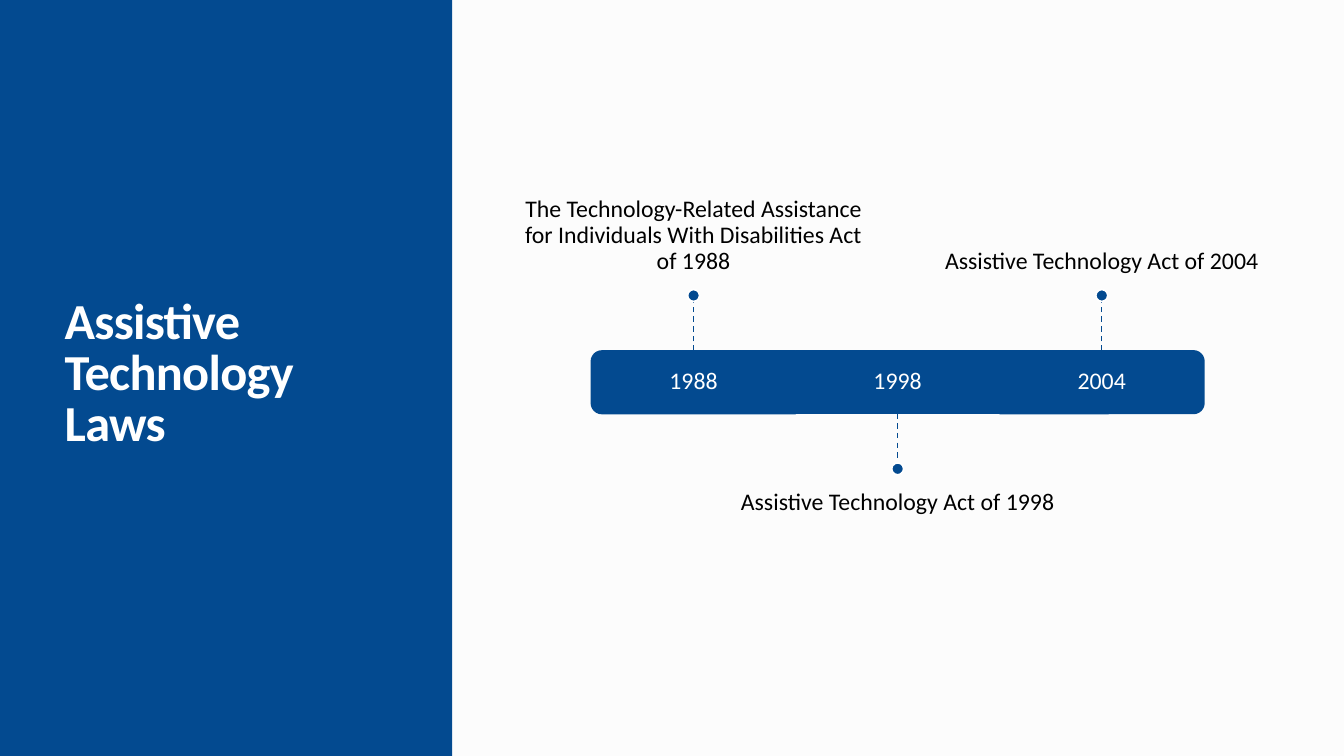
from lxml import etree
from pptx import Presentation
from pptx.dml.color import RGBColor
from pptx.enum.dml import MSO_LINE
from pptx.enum.shapes import MSO_CONNECTOR, MSO_SHAPE
from pptx.enum.text import MSO_ANCHOR, MSO_AUTO_SIZE, PP_ALIGN
from pptx.oxml.ns import qn
from pptx.util import Pt

RECTANGLE, OVAL = MSO_SHAPE.RECTANGLE, MSO_SHAPE.OVAL
ROUNDED_END = MSO_SHAPE.ROUND_2_SAME_RECTANGLE
TOP, MIDDLE, BOTTOM = MSO_ANCHOR.TOP, MSO_ANCHOR.MIDDLE, MSO_ANCHOR.BOTTOM
LEFT, CENTER = PP_ALIGN.LEFT, PP_ALIGN.CENTER
BLUE, WHITE, BLACK, PAPER = "034A90", "FFFFFF", "000000", "FCFCFC"


def add_block(kind, left, top, width, height, outline=None):
    shape = slide.shapes.add_shape(kind, Pt(left), Pt(top), Pt(width), Pt(height))
    shape.shadow.inherit = False
    shape.fill.solid()
    shape.fill.fore_color.rgb = RGBColor.from_string(BLUE)
    if outline:
        shape.line.color.rgb = RGBColor.from_string(outline)
        shape.line.width = Pt(1.25)
    else:
        shape.line.fill.background()
    return shape


def write_text(shape, text, color, anchor, alignment, spacing, font_values, margins):
    frame = shape.text_frame
    frame.text = text
    frame.word_wrap = True
    frame.auto_size = MSO_AUTO_SIZE.NONE
    frame.vertical_anchor = anchor
    for side, margin in margins.items():
        setattr(frame, "margin_" + side, Pt(margin))
    paragraph = frame.paragraphs[0]
    paragraph.alignment = alignment
    paragraph.line_spacing = spacing
    paragraph.space_before = paragraph.space_after = Pt(0)
    font = paragraph.runs[0].font
    font.color.rgb = RGBColor.from_string(color)
    for name, value in font_values.items():
        setattr(font, name, value)


presentation = Presentation()
presentation.slide_width, presentation.slide_height = Pt(960), Pt(540)
slide = presentation.slides.add_slide(presentation.slide_layouts[5])
slide.background.fill.solid()
slide.background.fill.fore_color.rgb = RGBColor.from_string(PAPER)

# Left panel with its edge strip
add_block(RECTANGLE, 0, 0, 319, 540)
add_block(RECTANGLE, 318, 0, 5, 540)

# Title, moved in front of the panel
title = slide.shapes.title
title.left, title.top, title.width, title.height = Pt(39), Pt(41), Pt(243), Pt(454)
write_text(title, "Assistive Technology Laws", WHITE, MIDDLE, LEFT, 0.85,
           {"name": "Calibri", "size": Pt(36), "bold": True},
           {"left": 7.2, "right": 7.2, "top": 3.6, "bottom": 3.6})
title.text_frame.paragraphs[0].runs[0].font._element.set("spc", "-50")
slide.shapes._spTree.append(title._element)

# Timeline: year, law, law above the bar, segment shape, rotation
milestones = [
    ("1988", "The Technology-Related Assistance for Individuals With Disabilities Act of 1988",
     True, ROUNDED_END, 270),
    ("1998", "Assistive Technology Act of 1998", False, RECTANGLE, 0),
    ("2004", "Assistive Technology Act of 2004", True, ROUNDED_END, 90),
]
first_center, segment_width = 495.4, 145.8
bar_middle, bar_height = 273, 44.6
stem, dot = 35.3, 8.6
law_width, law_height = 243.4, 155.5
label_font = {"name": "Calibri", "size": Pt(17)}

for index, (year, law, above, kind, rotation) in enumerate(milestones):
    center = first_center + index * segment_width
    direction = -1 if above else 1

    # Bar segment, with the end pieces turned outwards
    width, height = (bar_height, segment_width) if rotation else (segment_width, bar_height)
    segment = add_block(kind, center - width / 2, bar_middle - height / 2, width, height, BLUE)
    segment.rotation = rotation

    # Year
    year_box = slide.shapes.add_textbox(Pt(center - segment_width / 2),
                                        Pt(bar_middle - bar_height / 2),
                                        Pt(segment_width), Pt(bar_height))
    write_text(year_box, year, WHITE, MIDDLE, CENTER, 0.9, label_font,
               dict.fromkeys(("left", "right", "top", "bottom"), 10))

    # Dashed stem
    stem_start = bar_middle + direction * bar_height / 2
    stem_end = stem_start + direction * stem
    connector = slide.shapes.add_connector(MSO_CONNECTOR.STRAIGHT, Pt(center), Pt(stem_start),
                                           Pt(center), Pt(stem_end))
    connector.line.color.rgb = RGBColor.from_string(BLUE)
    connector.line.width = Pt(1)
    connector.line.dash_style = MSO_LINE.DASH
    etree.SubElement(connector._element.spPr, qn("a:effectLst"))

    # Dot at the end of the stem
    dot_middle = stem_end + direction * dot / 2
    add_block(OVAL, center - dot / 2, dot_middle - dot / 2, dot, dot, WHITE)

    # Law beyond the dot
    law_edge = stem_end + direction * (dot + 0.7)
    law_box = slide.shapes.add_textbox(Pt(center - law_width / 2),
                                       Pt(law_edge - law_height if above else law_edge),
                                       Pt(law_width), Pt(law_height))
    write_text(law_box, law, BLACK, BOTTOM if above else TOP, CENTER, 0.9, label_font,
               {"left": 0, "right": 0, "top": 0 if above else 10, "bottom": 10 if above else 0})

presentation.save("out.pptx")
